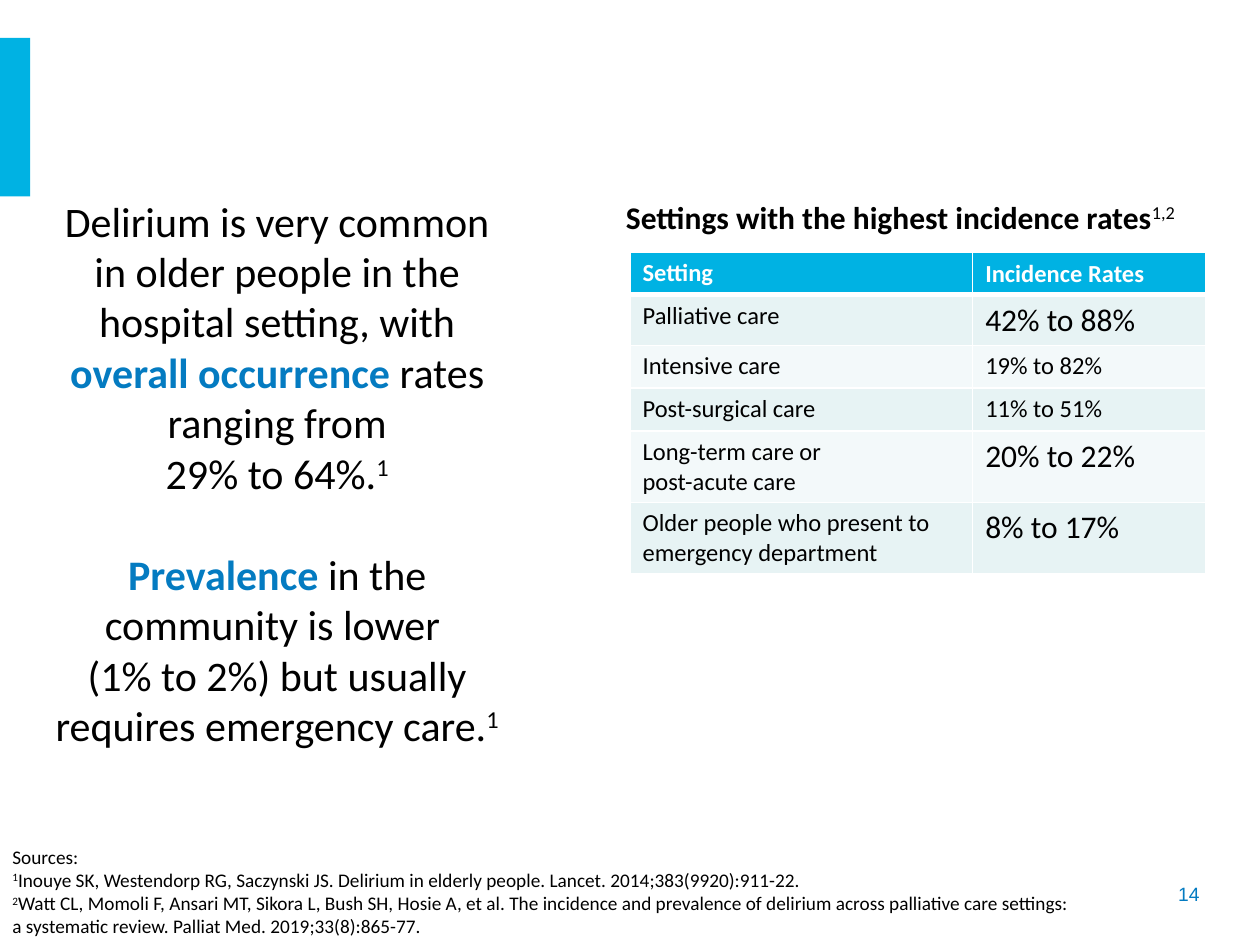
"""Build the slide on delirium occurrence rates with its table of settings."""
from lxml.etree import SubElement
from pptx import Presentation
from pptx.dml.color import RGBColor as RGB
from pptx.enum.dml import MSO_LINE
from pptx.enum.shapes import MSO_SHAPE as SHAPE
from pptx.enum.text import MSO_ANCHOR as ANCHOR, PP_ALIGN as ALIGN
from pptx.oxml.ns import qn
from pptx.util import Inches, Pt

THEME = {
    "font": "Calibri", "number_font": "Arial",
    "black": "000000", "white": "FFFFFF", "blue": "047BC1", "cyan": "00B2E3",
    "bands": ["E7F3F4", "F3F9FA"],
    "body": 24, "heading": 18, "cell": 14, "small": 11,
}
COLUMNS, ROWS = 100, 75

prs = Presentation()
prs.slide_width, prs.slide_height = Inches(10), Inches(7.5)
s = prs.slides.add_slide(prs.slide_layouts[6])


def grid(*box):
    unit_x, unit_y = prs.slide_width / COLUMNS, prs.slide_height / ROWS
    return [round(n * unit) for n, unit in zip(box, (unit_x, unit_y) * 2)]


def write(tf, paragraphs, size, color="black", font="font", align=ALIGN.LEFT):
    tf.word_wrap = True
    for i, pieces in enumerate(paragraphs):
        p = tf.paragraphs[0] if i == 0 else tf.add_paragraph()
        p.alignment = align
        for text, style in pieces:
            for j, line in enumerate(text.split("\n")):
                if j:
                    p.add_line_break()
                r = p.add_run()
                r.text = line
                r.font.name, r.font.size = THEME[font], Pt(THEME[size])
                r.font.bold = style in ("bold", "accent")
                shade = "blue" if style == "accent" else color
                r.font.color.rgb = RGB.from_string(THEME[shade])
                if style == "super":
                    r.font._element.set("baseline", "30000")


number = s.shapes.add_textbox(*grid(84.5, 69.5, 11.7, 2.9))
write(number.text_frame, [[("14", "")]], "small", "blue", "number_font", ALIGN.RIGHT)

bar = s.shapes.add_shape(SHAPE.RECTANGLE, *grid(0, 3, 2.4, 12.6))
bar.shadow.inherit = False
bar.fill.solid()
bar.fill.fore_color.rgb = RGB.from_string(THEME["cyan"])
bar.line.fill.background()

message = s.shapes.add_shape(SHAPE.RECTANGLE, *grid(3.1, 14.8, 37.8, 45.4))
message.shadow.inherit = False
message.fill.background()
message.line.color.rgb = RGB.from_string(THEME["white"])
message.line.width = Pt(3)
message.line.dash_style = MSO_LINE.ROUND_DOT
tf = message.text_frame
tf.vertical_anchor = ANCHOR.MIDDLE
write(tf, [
    [("Delirium is very common in older people in the hospital setting, with ", ""),
     ("overall occurrence", "accent"), (" rates ranging from", "")],
    [("29% to 64%.", ""), ("1", "super")],
    [("Prevalence", "accent"), (" in the community is lower ", "")],
    [("(1% to 2%) but usually requires emergency care.", ""), ("1", "super")],
], "body", align=ALIGN.CENTER)
tf.paragraphs[2].space_before = Pt(29)

sources = s.shapes.add_textbox(*grid(0, 66.6, 89, 8.4))
write(sources.text_frame, [
    [("Sources:", "")],
    [("1", "super"),
     ("Inouye SK, Westendorp RG, Saczynski JS. Delirium in elderly people. "
      "Lancet. 2014;383(9920):911-22.", "")],
    [("2", "super"),
     ("Watt CL, Momoli F, Ansari MT, Sikora L, Bush SH, Hosie A, et al. The incidence "
      "and prevalence of delirium across palliative care settings: \n"
      "a systematic review. Palliat Med. 2019;33(8):865-77.", "")],
], "small")

rates = [
    ("Setting", "Incidence Rates", "cell", 3.4),
    ("Palliative care", "42% to 88%", "heading", 3.9),
    ("Intensive care", "19% to 82%", "cell", 3.4),
    ("Post-surgical care", "11% to 51%", "cell", 3.4),
    ("Long-term care or \npost-acute care", "20% to 22%", "heading", 5.6),
    ("Older people who present to emergency department", "8% to 17%", "heading", 5.6),
]
table = s.shapes.add_table(len(rates), 2, *grid(50, 20, 45.7, 25.3)).table
table.columns[0].width, table.columns[1].width = grid(27.2)[0], grid(18.5)[0]
for i, (setting, rate, rate_size, height) in enumerate(rates):
    table.rows[i].height = grid(0, height)[1]
    header = i == 0
    fill = THEME["cyan"] if header else THEME["bands"][(i - 1) % 2]
    for j, (text, size) in enumerate([(setting, "cell"), (rate, rate_size)]):
        cell = table.cell(i, j)
        write(cell.text_frame, [[(text, "bold" if header else "")]], size,
              "white" if header else "black")
        if header and j:
            cell.vertical_anchor = ANCHOR.BOTTOM
        tcPr = cell._tc.get_or_add_tcPr()
        for side in "LRTB":
            thick = (header and side == "B") or (i == 1 and side == "T")
            ln = SubElement(tcPr, qn(f"a:ln{side}"), w=str(Pt(3 if thick else 1)))
            SubElement(SubElement(ln, qn("a:solidFill")), qn("a:srgbClr"), val=THEME["white"])
        cell.fill.solid()
        cell.fill.fore_color.rgb = RGB.from_string(fill)

heading = s.shapes.add_textbox(*grid(48.7, 15.2, 49.7, 4))
write(heading.text_frame, [
    [("Settings with the highest incidence rates", "bold"), ("1,2", "super")],
], "heading")

prs.save("out.pptx")
